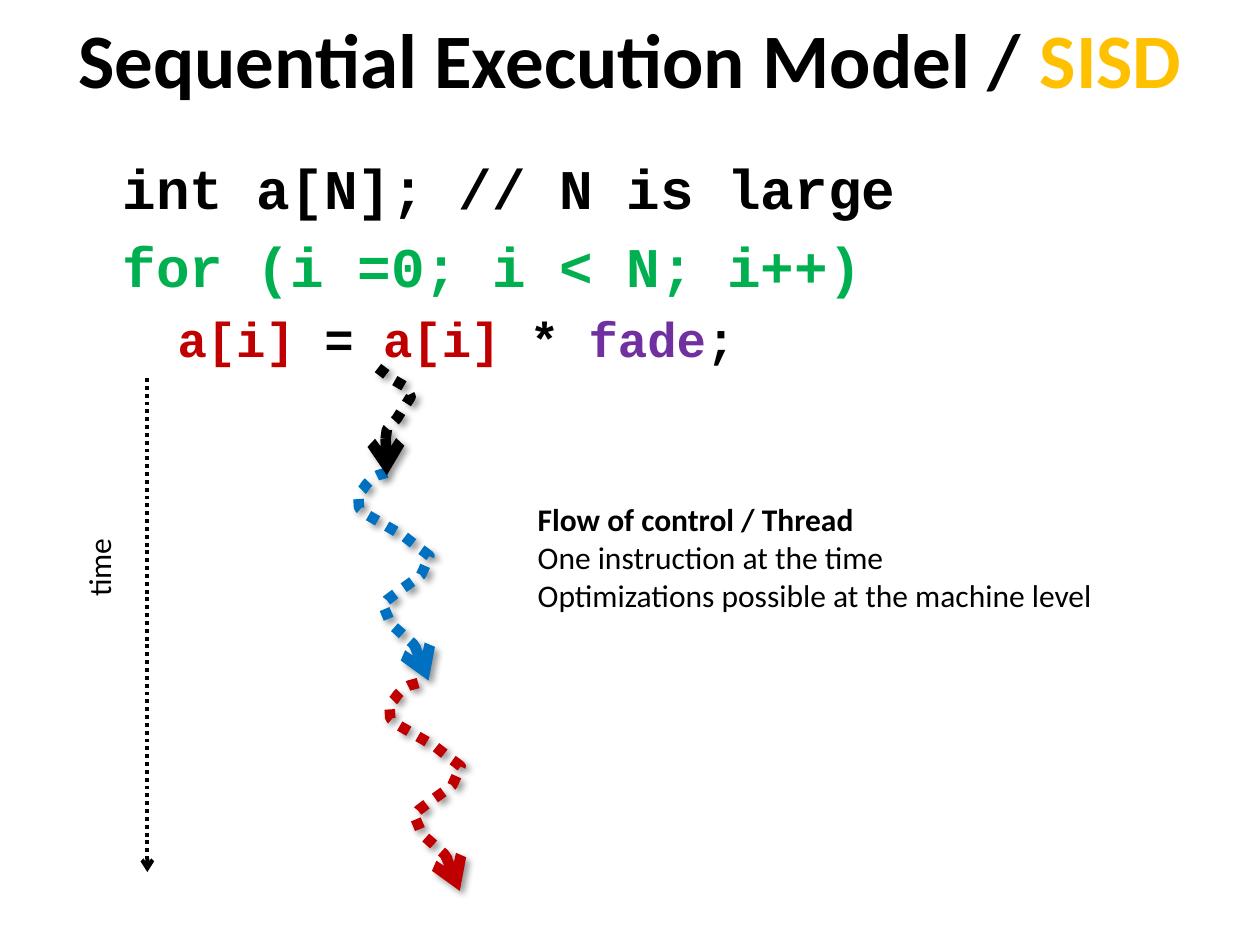
from lxml import etree
from pptx import Presentation, util as u
from pptx.dml.color import RGBColor
from pptx.enum import dml, shapes, text
from pptx.oxml import ns

BLACK, GOLD, GREEN = "000000", "FFC000", "00B050"
RED, PURPLE, BLUE = "C00000", "7030A0", "0070C0"

TITLE = [(0, [("Sequential Execution Model / ", BLACK, True), ("SISD", GOLD, True)])]
CODE = [
    (0, [("int a[N]; // N is large", BLACK, True)]),
    (0, [("for (i =0; i < N; i++)", GREEN, True)]),
    (1, [("a[i]", RED, True), (" = ", BLACK, True), ("a[i]", RED, True),
         (" * ", BLACK, True), ("fade", PURPLE, True), (";", BLACK, True)]),
]
TIME = [(0, [("time", BLACK, False)])]
THREAD = [
    (0, [("Flow of control / Thread", BLACK, True)]),
    (0, [("One instruction at the time", BLACK, False)]),
    (0, [("Optimizations possible at the machine level", BLACK, False)]),
]

TITLE_LEVELS = [(44, 0, 0)]
CODE_LEVELS = [(32, 0.95, 6.4), (28, 2.06, 5.6)]
PLAIN_LEVELS = [(18, 0, 0)]

WAVE = [
    (0, 0), (-0.18, 0.05), (-0.28, 0.1), (-0.41, 0.23), (-0.48, 0.33), (-0.58, 0.43),
    (-0.56, 0.71), (-0.38, 0.86), (0.33, 1.27), (0.69, 1.55), (0.76, 1.6), (0.86, 1.68),
    (0.69, 2.06), (0.56, 2.16), (0.28, 2.36), (0, 2.57), (-0.08, 2.67), (0.08, 3.05),
    (0.25, 3.2), (0.53, 3.45), (0.64, 3.63), (0.71, 3.68), (0.84, 4.19),
]
ENTRY = [
    (0, 0), (0.3, 0.23), (0.56, 0.38), (0.66, 0.58), (0.48, 0.86),
    (0.38, 1.02), (0.18, 1.24), (0.13, 1.6), (0.18, 2.16),
]
THREAD_PARTS = [
    (7.8, 9.53, WAVE, BLUE),
    (8.43, 13.77, WAVE, RED),
    (7.62, 7.42, ENTRY, BLACK),
]


def color(value):
    return RGBColor.from_string(value)


def apply(target, formats):
    for name, value in formats.items():
        setattr(target, name, value)


def add_node(parent, tag, **attributes):
    return etree.SubElement(parent, ns.qn(tag), attributes)


def add_text(page, place, paragraphs, levels, font, frame_format, align=None):
    box = page.shapes.add_textbox(*map(u.Cm, place))
    frame = box.text_frame
    apply(frame, frame_format)
    for index, (level, spans) in enumerate(paragraphs):
        para = frame.paragraphs[0] if index == 0 else frame.add_paragraph()
        size, indent, gap = levels[level]
        apply(para, {"level": level, "alignment": align, "space_before": u.Pt(gap)})
        if indent:
            para._p.get_or_add_pPr().set("marL", str(u.Cm(indent)))
        for words, tint, bold in spans:
            span = para.add_run()
            span.text = words
            apply(span.font, {"name": font, "size": u.Pt(size), "bold": bold})
            span.font.color.rgb = color(tint)
    return box


def dotted_arrow(line, tint, width):
    line.color.rgb = color(tint)
    apply(line, {"width": u.Pt(width), "dash_style": dml.MSO_LINE.ROUND_DOT})
    add_node(line._get_or_add_ln(), "a:tailEnd", type="arrow")


def add_thread(page, left, top, points, tint):
    corners = [(u.Cm(left + x), u.Cm(top + y)) for x, y in points]
    builder = page.shapes.build_freeform(*corners[0])
    builder.add_line_segments(corners[1:], close=False)
    curve = builder.convert_to_shape()
    curve.fill.background()
    dotted_arrow(curve.line, tint, 6)
    curve.shadow.inherit = False
    effects = curve._element.spPr.find(ns.qn("a:effectLst"))
    shadow = add_node(effects, "a:outerShdw", blurRad=str(u.Pt(4)), dist=str(u.Pt(3)),
                      dir="2700000", algn="tl", rotWithShape="0")
    shade = add_node(shadow, "a:srgbClr", val=BLACK)
    add_node(shade, "a:alpha", val="40000")


def main():
    deck = Presentation()
    apply(deck, {"slide_width": u.Cm(25.4), "slide_height": u.Cm(19.05)})
    page = deck.slides.add_slide(deck.slide_layouts[6])

    wrapped, loose = {"word_wrap": True}, {"word_wrap": False}
    add_text(page, (1.27, -0.43, 22.86, 3.18), TITLE, TITLE_LEVELS, "Calibri",
             {**wrapped, "vertical_anchor": text.MSO_ANCHOR.MIDDLE},
             text.PP_ALIGN.CENTER)
    add_text(page, (1.27, 2.97, 22.86, 12.57), CODE, CODE_LEVELS, "Courier New", wrapped)

    axis = page.shapes.add_connector(
        shapes.MSO_CONNECTOR.STRAIGHT, *map(u.Cm, (2.97, 7.62, 2.97, 17.58)))
    dotted_arrow(axis.line, BLACK, 2.25)
    add_node(axis._element.spPr, "a:effectLst")
    label = add_text(page, (1.14, 10.92, 1.7, 1.02), TIME, PLAIN_LEVELS, "Calibri", loose)
    label.rotation = 270

    for part in THREAD_PARTS:
        add_thread(page, *part)
    add_text(page, (10.59, 9.96, 12.67, 2.54), THREAD, PLAIN_LEVELS, "Calibri", loose)
    deck.save("out.pptx")


if __name__ == "__main__":
    main()
